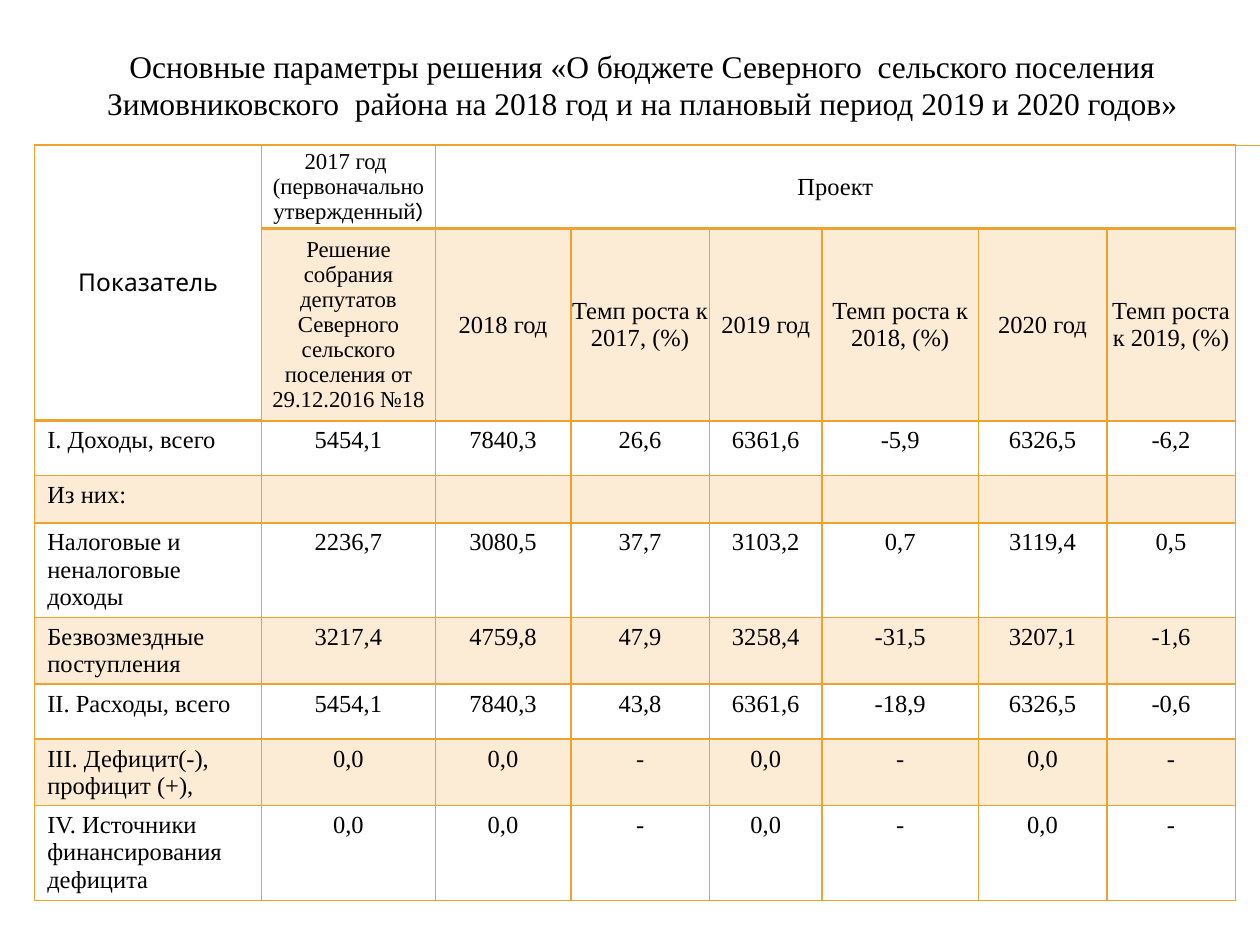
from dataclasses import dataclass
from lxml.etree import SubElement as Sub
from pptx import Presentation
from pptx.dml.color import RGBColor as Rgb
from pptx.enum.shapes import MSO_CONNECTOR as Link
from pptx.enum.text import MSO_ANCHOR as Anchor, PP_ALIGN as Align
from pptx.oxml.ns import qn
from pptx.util import Inches, Pt


@dataclass(frozen=True)
class Theme:
    """Colours, fonts and type sizes of the slide."""
    ink: str = "000000"
    gold: str = "F0A22E"
    tint: int = 20
    serif: str = "Times New Roman"
    sans: str = "Karla"
    title: int = 18
    body: int = 14
    small: int = 13
    rule: float = 0.75
    thin: int = 1
    thick: int = 2
    plain: str = "{2D5ABB26-0587-4C30-8999-92F81FD0307C}"


T = Theme()
UNIT = Inches(0.1)
COLS = (18, 13.8, 10.75, 11, 8.95, 12.4, 10.2, 10.2)
ROWS = (6.3, 13.95, 4.35, 3.75, 7.45, 5.3, 4.35, 5.3, 7.45)
BANDS = (3, 5, 7)
TITLE = ("Основные параметры решения «О бюджете Северного  сельского поселения "
         "Зимовниковского  района на 2018 год и на плановый период 2019 и 2020 годов»")
HEADS = (
    ("Показатель", "2017 год \n(первоначально утвержденный", "Проект"),
    ("", "Решение собрания депутатов Северного сельского поселения от 29.12.2016 №18",
     "2018 год", "Темп роста к 2017, (%)", "2019 год", "Темп роста к 2018, (%)",
     "2020 год", "Темп роста к 2019, (%)"),
)
DATA = (
    ("I. Доходы, всего", "5454,1", "7840,3", "26,6", "6361,6", "-5,9", "6326,5", "-6,2"),
    ("Из них:",) + ("",) * 7,
    ("Налоговые и неналоговые доходы",
     "2236,7", "3080,5", "37,7", "3103,2", "0,7", "3119,4", "0,5"),
    ("Безвозмездные поступления",
     "3217,4", "4759,8", "47,9", "3258,4", "-31,5", "3207,1", "-1,6"),
    ("II. Расходы, всего",
     "5454,1", "7840,3", "43,8", "6361,6", "-18,9", "6326,5", "-0,6"),
    ("III. Дефицит(-), профицит (+),", "0,0", "0,0", "-", "0,0", "-", "0,0", "-"),
    ("IV. Источники финансирования дефицита", "0,0", "0,0", "-", "0,0", "-", "0,0", "-"),
)
HEAD = {"vertical_anchor": Anchor.MIDDLE, "margin_left": Inches(0.01),
        "margin_top": Inches(0.01), "margin_right": Inches(0.01), "margin_bottom": 0}
BODY = {"vertical_anchor": Anchor.TOP, "margin_bottom": 0}


def grid(*vals):
    """Turn grid units into lengths."""
    return [round(val * UNIT) for val in vals]


def apply(item, form):
    """Set each format value on an item."""
    for key, val in form.items():
        setattr(item, key, val)


def add_run(para, text, size, face=T.serif):
    """Add a run in the ink colour."""
    run = para.add_run()
    run.text = text
    apply(run.font, {"size": Pt(size), "name": face})
    run.font.color.rgb = Rgb.from_string(T.ink)


def write(frame, text, size, align, face=T.serif):
    """Write the lines of a text as paragraphs."""
    for i, line in enumerate(text.split("\n")):
        para = frame.add_paragraph() if i else frame.paragraphs[0]
        apply(para, {"alignment": align, "line_spacing": 1.0,
                     "space_before": Pt(0), "space_after": Pt(0)})
        if line:
            add_run(para, line, size, face)
        else:
            para._p.get_or_add_endParaRPr().set("sz", str(size * 100))


def add_rule(slide, y):
    """Draw a line from the left indent to the slide's right edge."""
    line = slide.shapes.add_connector(Link.STRAIGHT, *grid(5.6, y, 100, y))
    line.line.width = Pt(T.rule)
    line.line.color.rgb = Rgb.from_string(T.gold)
    Sub(line._element.spPr, qn("a:effectLst"))


def add_title(slide):
    """Add the centred heading."""
    frame = slide.shapes.add_textbox(*grid(3.5, 2.1, 95, 9.2)).text_frame
    apply(frame, {"word_wrap": True, "vertical_anchor": Anchor.MIDDLE})
    write(frame, TITLE, T.title, Align.CENTER)


def edge(cell, row, col):
    """Draw the four borders, thick below the headings."""
    thick = {"T": row == 1 or (row == 2 and col == 0),
             "B": row == 0 or (row == 1 and col == 0)}
    for side in "LRTB":
        width = T.thick if thick.get(side) else T.thin
        line = Sub(cell._tc.get_or_add_tcPr(), qn("a:ln" + side),
                   w=str(Pt(width)), cmpd="sng")
        Sub(Sub(line, qn("a:solidFill")), qn("a:srgbClr"), val=T.gold)
        Sub(line, qn("a:prstDash"), val="solid")


def shade(cell, tinted):
    """Give the cell a pale gold fill or none."""
    if not tinted:
        cell.fill.background()
        return
    cell.fill.solid()
    cell.fill.fore_color.rgb = Rgb.from_string(T.gold)
    tone = cell._tc.tcPr.find(qn("a:solidFill")).find(qn("a:srgbClr"))
    Sub(tone, qn("a:alpha"), val=str(T.tint * 1000))


def fill_cell(cell, text, row, col):
    """Write and format one cell."""
    head = row < len(HEADS)
    size = T.small if head and col == 1 else T.body
    face = T.sans if head and col == 0 else T.serif
    align = Align.CENTER if head or col else Align.LEFT
    write(cell.text_frame, text, size, align, face)
    apply(cell, HEAD if head else BODY)
    edge(cell, row, col)
    shade(cell, row in BANDS or (row == 1 and col > 0))


def add_budget(slide):
    """Add the budget table with its merged headings."""
    box = grid(2.75, 11.5, sum(COLS), sum(ROWS))
    table = slide.shapes.add_table(len(ROWS), len(COLS), *box).table
    apply(table, {"first_row": False, "horz_banding": False})
    table._tbl.tblPr.find(qn("a:tableStyleId")).text = T.plain
    for col, width in zip(table.columns, grid(*COLS)):
        col.width = width
    for row, height in zip(table.rows, grid(*ROWS)):
        row.height = height
    for r, texts in enumerate(HEADS + DATA):
        for c in range(len(COLS)):
            fill_cell(table.cell(r, c), texts[c] if c < len(texts) else "", r, c)
    add_run(table.cell(0, 1).text_frame.paragraphs[-1], ")", T.small, T.sans)
    table.cell(0, 0).merge(table.cell(1, 0))
    table.cell(0, 2).merge(table.cell(0, len(COLS) - 1))


def main():
    """Build and save the slide."""
    deck = Presentation()
    apply(deck, {"slide_width": 100 * UNIT, "slide_height": 75 * UNIT})
    slide = deck.slides.add_slide(deck.slide_layouts[6])
    for y in (11.52, 11.55):
        add_rule(slide, y)
    add_title(slide)
    add_budget(slide)
    deck.save("out.pptx")


if __name__ == "__main__":
    main()
